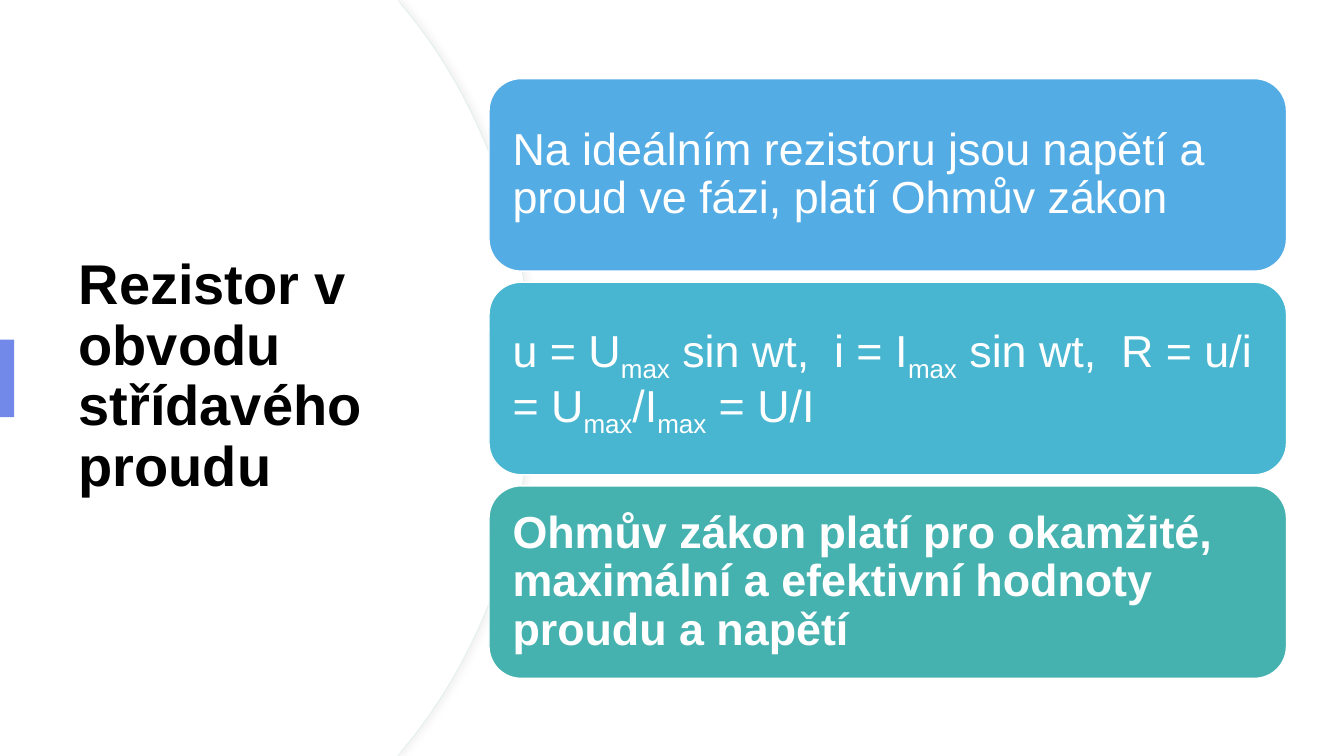
import pptx
import pptx.util
import pptx.dml.color
import pptx.enum.shapes
import pptx.enum.text
import pptx.oxml
import pptx.oxml.ns

Inches, Pt = pptx.util.Inches, pptx.util.Pt
RGB = pptx.dml.color.RGBColor.from_string
SHAPE = pptx.enum.shapes.MSO_SHAPE
ALIGN = pptx.enum.text.PP_ALIGN
ANCHOR = pptx.enum.text.MSO_ANCHOR
qn = pptx.oxml.ns.qn
NS = pptx.oxml.ns.nsdecls("a")

W, H = 13.33, 7.5
THEME = {
    "font": "Arial", "title_size": 40, "body_size": 32,
    "title": "000000", "paper": "FFFFFF", "edge": "E4F0ED",
    "shadow": "D9D9D9", "accent": "7389EA",
    "cards": ["54ACE5", "48B6D0", "45B2B0"],
}
CARD_LEFT, CARD_TOP, CARD_W, CARD_H, CARD_GAP = 4.85, 0.78, 7.91, 1.91, 0.11
MARGINS = {"left": 0.14, "right": 0.13, "top": 0.13, "bottom": 0.13}
CARDS = [
    ([("Na ideálním rezistoru jsou napětí a proud ve fázi, platí Ohmův zákon", 0)], False),
    ([("u = U", 0), ("max", -25), (" sin wt,  i = I", 0), ("max", -25),
      (" sin wt,  R = u/i = U", 0), ("max", -25), ("/I", 0), ("max", -25),
      (" = U/I", 0)], False),
    ([("Ohmův zákon platí pro okamžité, maximální a efektivní hodnoty proudu a napětí", 0)], True),
]


def paint(sp, fill, line=None, width=1):
    sp.shadow.inherit = False
    sp.fill.solid()
    sp.fill.fore_color.rgb = RGB(fill)
    if line:
        sp.line.color.rgb = RGB(line)
        sp.line.width = Pt(width)
    else:
        sp.line.fill.background()


def write(p, runs, size, color, bold):
    p.alignment = ALIGN.LEFT
    p.line_spacing = 0.9
    for text, baseline in runs:
        r = p.add_run()
        r.text = text
        font = {"name": THEME["font"], "size": Pt(size), "bold": bold}
        for key, value in font.items():
            setattr(r.font, key, value)
        r.font.color.rgb = RGB(color)
        if baseline:
            r._r.get_or_add_rPr().set("baseline", str(baseline * 1000))


prs = pptx.Presentation()
prs.slide_width, prs.slide_height = Inches(W), Inches(H)
s = prs.slides.add_slide(prs.slide_layouts[5])
title = s.shapes.title

for reach, edge in [(5.27, THEME["edge"]), (5.26, None)]:
    shoulder, mid = reach - 1.26, H / 2
    corners = [(3.94, 0), (shoulder, 0.08), (reach, mid), (shoulder, H - 0.08), (3.94, H), (0, H)]
    fb = s.shapes.build_freeform(0, 0)
    fb.add_line_segments([(Inches(x), Inches(y)) for x, y in corners], close=True)
    panel = fb.convert_to_shape()
    paint(panel, THEME["paper"], edge, 0.75)

    upper = [(reach - 0.48, 1.02), (reach, 2.32), (reach, mid)]
    lower = [(reach, H - 2.32), (reach - 0.48, H - 1.02), (shoulder, H - 0.08)]
    segments = list(panel._element.iter(qn("a:lnTo")))
    for segment, curve in zip(segments[2:4], (upper, lower)):
        pts = "".join(f'<a:pt x="{Inches(x)}" y="{Inches(y)}"/>' for x, y in curve)
        bezier = pptx.oxml.parse_xml(f"<a:cubicBezTo {NS}>{pts}</a:cubicBezTo>")
        segment.getparent().replace(segment, bezier)

    if edge:
        panel._element.spPr.find(qn("a:effectLst")).append(pptx.oxml.parse_xml(
            f'<a:outerShdw {NS} blurRad="{Pt(4)}" dist="{Pt(3)}" dir="0">'
            f'<a:srgbClr val="{THEME["shadow"]}"><a:alpha val="30000"/></a:srgbClr></a:outerShdw>'))

s.shapes._spTree.append(title._element)
title.left, title.top, title.width, title.height = map(Inches, (0.68, 1.27, 3.94, 4.95))
tf = title.text_frame
tf.word_wrap = True
tf.auto_size = pptx.enum.text.MSO_AUTO_SIZE.NONE
tf.vertical_anchor = ANCHOR.MIDDLE
write(tf.paragraphs[0], [("Rezistor v obvodu střídavého proudu", 0)],
      THEME["title_size"], THEME["title"], True)

marker = s.shapes.add_shape(SHAPE.RECTANGLE, 0, Inches(3.37), Inches(0.14), Inches(0.77))
paint(marker, THEME["accent"])

for i, ((runs, bold), color) in enumerate(zip(CARDS, THEME["cards"])):
    card = s.shapes.add_shape(SHAPE.ROUNDED_RECTANGLE, Inches(CARD_LEFT),
                              Inches(CARD_TOP + i * (CARD_H + CARD_GAP)),
                              Inches(CARD_W), Inches(CARD_H))
    paint(card, color, THEME["paper"])
    tf = card.text_frame
    tf.word_wrap = True
    tf.vertical_anchor = ANCHOR.MIDDLE
    for side, margin in MARGINS.items():
        setattr(tf, f"margin_{side}", Inches(margin))
    write(tf.paragraphs[0], runs, THEME["body_size"], THEME["paper"], bold)

prs.save("out.pptx")
